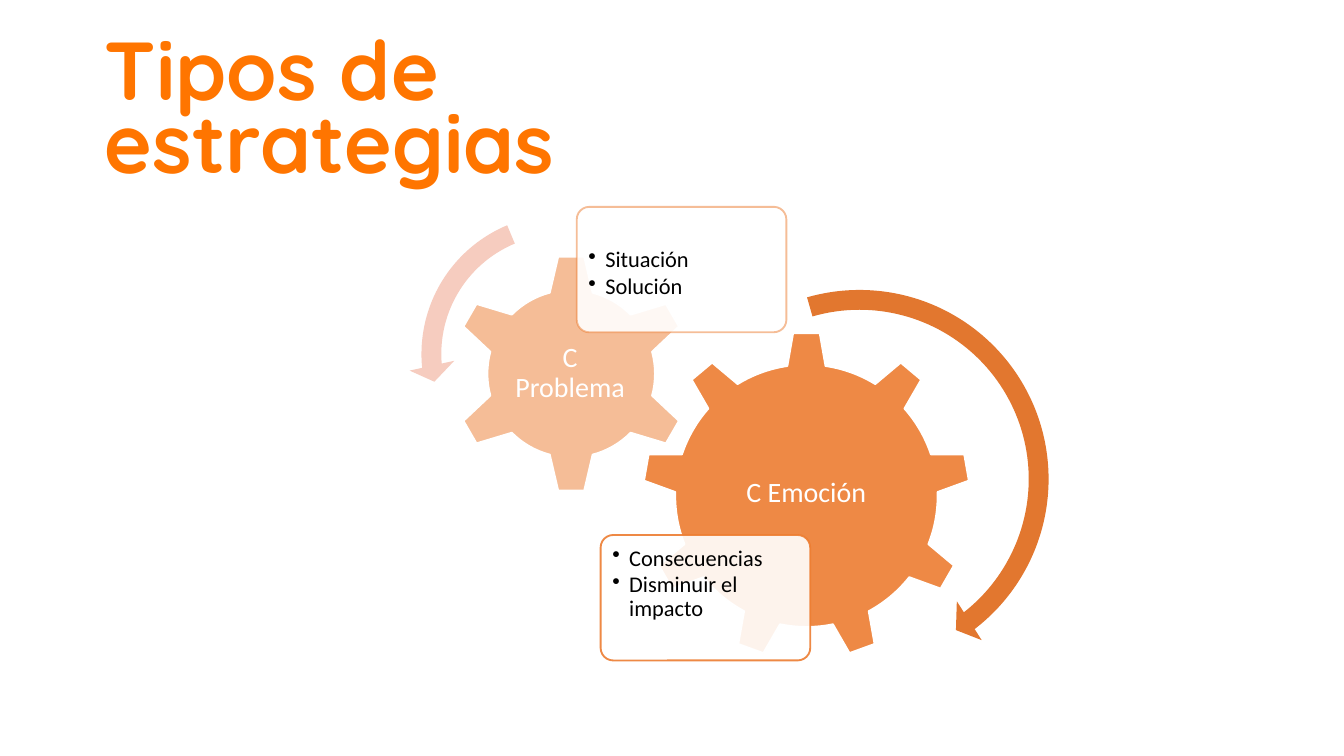
import pptx
import pptx.dml.color
import pptx.enum.shapes
import pptx.enum.text
import pptx.util
from dataclasses import dataclass
from lxml import etree
from pptx.oxml.ns import qn

Pt = pptx.util.Pt
RGBColor = pptx.dml.color.RGBColor
MSO_SHAPE = pptx.enum.shapes.MSO_SHAPE
PP_ALIGN = pptx.enum.text.PP_ALIGN
MSO_ANCHOR = pptx.enum.text.MSO_ANCHOR

TITLE_ORANGE = RGBColor(0xFF, 0x75, 0x00)
ORANGE = RGBColor(0xED, 0x7D, 0x31)
DARK_ORANGE = RGBColor(0xE2, 0x77, 0x2F)
PALE_PINK = RGBColor(0xF6, 0xCC, 0xBF)
WHITE = RGBColor(0xFF, 0xFF, 0xFF)
BLACK = RGBColor(0x00, 0x00, 0x00)

BODY_FONT = "Calibri"
Box = tuple[float, float, float, float]  # left, top, width, height in points


@dataclass
class Gear:
    kind: MSO_SHAPE
    box: Box
    opacity: int
    label: str
    label_box: Box


@dataclass
class Card:
    box: Box
    line_opacity: int
    top_margin: float
    items: list[str]


@dataclass
class TurnArrow:
    kind: MSO_SHAPE
    box: Box
    color: RGBColor
    adjustments: list[float]


EMOTION = (
    Gear(MSO_SHAPE.GEAR_9, (344.2, 177.8, 175.7, 175.7), 90,
         "C Emoción", (379.5, 219, 105, 90.5)),
    Card((321.8, 286.6, 112.3, 67.2), 90, 4.3,
         ["Consecuencias", "Disminuir el impacto"]),
)
PROBLEM = (
    Gear(MSO_SHAPE.GEAR_6, (241.9, 136.1, 128.2, 128.2), 50,
         "C Problema", (273.7, 168.5, 63.5, 63.5)),
    Card((309, 110.8, 112.3, 67.2), 50, 20.3, ["Situación", "Solución"]),
)
TURN_ARROWS = [
    TurnArrow(MSO_SHAPE.CIRCULAR_ARROW, (352.1, 148.3, 216.7, 216.7), DARK_ORANGE,
              [0.049, 3.126, 31.333, 152.342, 0.057]),
    TurnArrow(MSO_SHAPE.LEFT_CIRCULAR_ARROW, (218.9, 108, 163.4, 163.4), PALE_PINK,
              [0.065, 4.3, 104.891, 148.378, 0.075]),
]


def to_points(box: Box) -> list[int]:
    return [Pt(value) for value in box]


def set_opacity(properties, percent: int) -> None:
    """Add an alpha value to the one colour inside a fill or line element."""
    color = properties.find(".//" + qn("a:srgbClr"))
    etree.SubElement(color, qn("a:alpha")).set("val", str(percent * 1000))


def add_filled_shape(slide, kind: MSO_SHAPE, box: Box, color: RGBColor, opacity: int = 100):
    shape = slide.shapes.add_shape(kind, *to_points(box))
    shape.shadow.inherit = False
    shape.fill.solid()
    shape.fill.fore_color.rgb = color
    if opacity < 100:
        set_opacity(shape._element.spPr.find(qn("a:solidFill")), opacity)
    return shape


def set_margins(frame, margin: float) -> None:
    frame.margin_left = frame.margin_right = Pt(margin)
    frame.margin_top = frame.margin_bottom = Pt(margin)


def style_paragraph(paragraph, size: float, color: RGBColor) -> None:
    paragraph.line_spacing = 0.9
    paragraph.font.name = BODY_FONT
    paragraph.font.size = Pt(size)
    paragraph.font.color.rgb = color


def add_gear(slide, gear: Gear) -> None:
    shape = add_filled_shape(slide, gear.kind, gear.box, ORANGE, gear.opacity)
    shape.line.color.rgb = WHITE
    shape.line.width = Pt(1)

    frame = slide.shapes.add_textbox(*to_points(gear.label_box)).text_frame
    frame.word_wrap = True
    frame.vertical_anchor = MSO_ANCHOR.MIDDLE
    set_margins(frame, 1.4)
    paragraph = frame.paragraphs[0]
    paragraph.text = gear.label
    paragraph.alignment = PP_ALIGN.CENTER
    style_paragraph(paragraph, 15, WHITE)


def add_card(slide, card: Card) -> None:
    shape = add_filled_shape(slide, MSO_SHAPE.ROUNDED_RECTANGLE, card.box, WHITE, 90)
    shape.adjustments[0] = 0.1
    shape.line.color.rgb = ORANGE
    shape.line.width = Pt(1)
    set_opacity(shape._element.spPr.find(qn("a:ln")), card.line_opacity)

    frame = shape.text_frame
    frame.word_wrap = True
    frame.vertical_anchor = MSO_ANCHOR.TOP
    set_margins(frame, 4.3)
    frame.margin_top = Pt(card.top_margin)
    for index, item in enumerate(card.items):
        paragraph = frame.add_paragraph() if index else frame.paragraphs[0]
        paragraph.text = item
        paragraph.alignment = PP_ALIGN.LEFT
        paragraph.space_after = Pt(1.3)
        properties = paragraph._p.get_or_add_pPr()
        properties.set("marL", str(Pt(9)))
        properties.set("indent", str(-Pt(9)))
        etree.SubElement(properties, qn("a:buChar")).set("char", "•")
        style_paragraph(paragraph, 12, BLACK)


def add_turn_arrow(slide, arrow: TurnArrow) -> None:
    shape = add_filled_shape(slide, arrow.kind, arrow.box, arrow.color)
    shape.line.fill.background()
    for index, value in enumerate(arrow.adjustments):
        shape.adjustments[index] = value


def add_title(slide, text: str) -> None:
    title = slide.shapes.title
    title.left, title.top, title.width, title.height = to_points((49, 19.4, 439.2, 86))
    frame = title.text_frame
    frame.word_wrap = True
    frame.auto_size = pptx.enum.text.MSO_AUTO_SIZE.NONE
    frame.vertical_anchor = MSO_ANCHOR.TOP
    frame.margin_right = Pt(40)
    paragraph = frame.paragraphs[0]
    paragraph.text = text
    paragraph.alignment = PP_ALIGN.LEFT
    paragraph.line_spacing = Pt(39.4)
    paragraph.font.name = "Quicksand"
    paragraph.font.size = Pt(44)
    paragraph.font.bold = True
    paragraph.font.color.rgb = TITLE_ORANGE


def main() -> None:
    presentation = pptx.Presentation()
    presentation.slide_width, presentation.slide_height = Pt(720), Pt(405)
    slide = presentation.slides.add_slide(presentation.slide_layouts[5])

    add_title(slide, "Tipos de estrategias")

    # Each gear lies beneath its own card
    for gear, card in (EMOTION, PROBLEM):
        add_gear(slide, gear)
        add_card(slide, card)

    # Turning direction of the gears
    for arrow in TURN_ARROWS:
        add_turn_arrow(slide, arrow)

    presentation.save("out.pptx")


if __name__ == "__main__":
    main()
